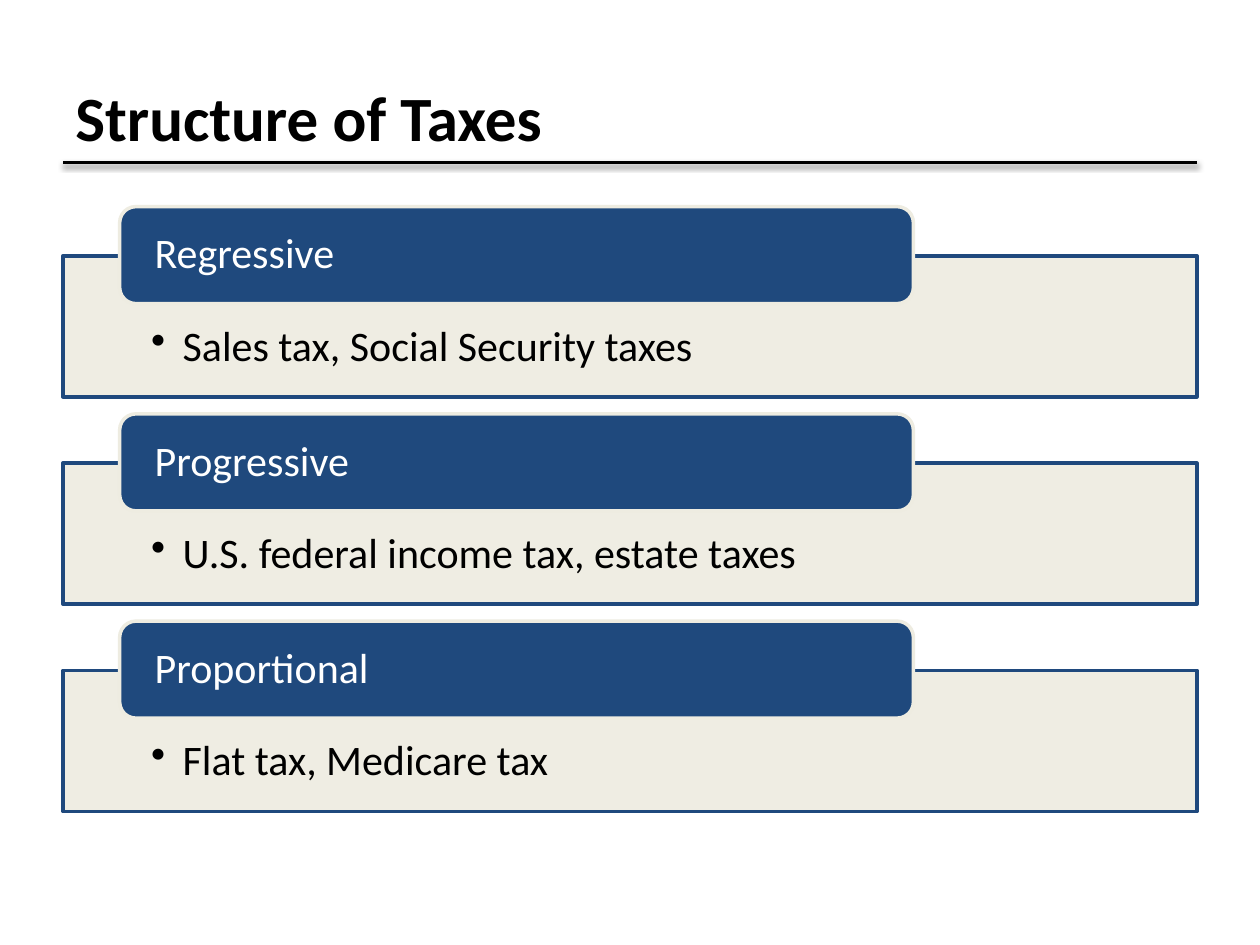
from lxml import etree
from pptx import Presentation
from pptx.dml.color import RGBColor
from pptx.enum.shapes import MSO_CONNECTOR, MSO_SHAPE
from pptx.enum.text import MSO_ANCHOR, PP_ALIGN
from pptx.oxml.ns import qn
from pptx.util import Inches, Pt

RECT, ROUNDED = MSO_SHAPE.RECTANGLE, MSO_SHAPE.ROUNDED_RECTANGLE
STRAIGHT = MSO_CONNECTOR.STRAIGHT
TOP, MIDDLE = MSO_ANCHOR.TOP, MSO_ANCHOR.MIDDLE
LEFT = PP_ALIGN.LEFT

FONT = "Calibri"
BLACK, WHITE, NAVY, CREAM = "000000", "FFFFFF", "1F497D", "EEECE1"
MARGIN, CONTENT_W = 0.5, 9
ROWS_TOP, ROW_PITCH = 1.64, 1.645
TAXES = [
    ("Regressive", "Sales tax, Social Security taxes"),
    ("Progressive", "U.S. federal income tax, estate taxes"),
    ("Proportional", "Flat tax, Medicare tax"),
]


def rgb(value):
    return RGBColor.from_string(value)


def add_child(parent, tag, **attrs):
    return etree.SubElement(parent, qn(tag), {k: str(v) for k, v in attrs.items()})


def write(sp, text, size, color, insets, anchor, bold=False, bullet=False):
    tf = sp.text_frame
    tf.word_wrap = True
    tf.vertical_anchor = anchor
    tf.margin_left, tf.margin_top, tf.margin_right, tf.margin_bottom = map(Inches, insets)
    p = tf.paragraphs[0]
    p.text = text
    p.alignment = LEFT
    if bullet:
        p.line_spacing = 0.9
        pPr = p._p.get_or_add_pPr()
        pPr.set("marL", str(Inches(0.25)))
        pPr.set("indent", str(Inches(-0.25)))
        add_child(pPr, "a:buChar", char="•")
    font = p.runs[0].font
    font.name, font.size, font.bold = FONT, Pt(size), bold
    font.color.rgb = rgb(color)


def add_panel(s, kind, x, y, w, h, fill, line):
    sp = s.shapes.add_shape(kind, Inches(x), Inches(y), Inches(w), Inches(h))
    sp.shadow.inherit = False
    sp.fill.solid()
    sp.fill.fore_color.rgb = rgb(fill)
    sp.line.color.rgb = rgb(line)
    sp.line.width = Pt(2)
    return sp


def add_title(s, text, x, y, w, h):
    """Title with a shadowed rule beneath it."""
    rule_y = Inches(y + 0.99)
    rule = s.shapes.add_connector(STRAIGHT, Inches(x), rule_y, Inches(x + w), rule_y)
    rule.line.color.rgb = rgb(BLACK)
    rule.line.width = Pt(2)
    effects = add_child(rule._element.spPr, "a:effectLst")
    shadow = add_child(effects, "a:outerShdw", blurRad=Pt(3.1), dist=Pt(1.6),
                       dir=5400000, rotWithShape=0)
    color = add_child(shadow, "a:srgbClr", val=BLACK)
    add_child(color, "a:alpha", val=38000)

    box = s.shapes.add_textbox(Inches(x), Inches(y), Inches(w), Inches(h))
    write(box, text, 36, BLACK, (0.1, 0.05, 0.1, 0.05), MIDDLE, bold=True)


def add_tax_row(s, heading, examples, x, y, w):
    """Heading tab overlapping the top edge of its example panel."""
    body = add_panel(s, RECT, x, y + 0.39, w, 1.12, CREAM, NAVY)
    fill_color = body._element.spPr.find(qn("a:solidFill"))[0]
    add_child(fill_color, "a:alpha", val=90000)
    write(body, examples, 24, BLACK, (0.7, 0.55, 0.7, 0.19), TOP, bullet=True)

    tab = add_panel(s, ROUNDED, x + 0.05 * w, y, 0.7 * w, 0.77, NAVY, CREAM)
    write(tab, heading, 24, WHITE, (0.24, 0, 0.24, 0), MIDDLE)
    tab.text_frame.paragraphs[0].line_spacing = 0.9


def main():
    prs = Presentation()
    prs.slide_width, prs.slide_height = Inches(10), Inches(7.5)
    s = prs.slides.add_slide(prs.slide_layouts[6])
    add_title(s, "Structure of Taxes", MARGIN, 0.3, CONTENT_W, 1.25)
    for i, (heading, examples) in enumerate(TAXES):
        add_tax_row(s, heading, examples, MARGIN, ROWS_TOP + i * ROW_PITCH, CONTENT_W)
    prs.save("out.pptx")


if __name__ == "__main__":
    main()
